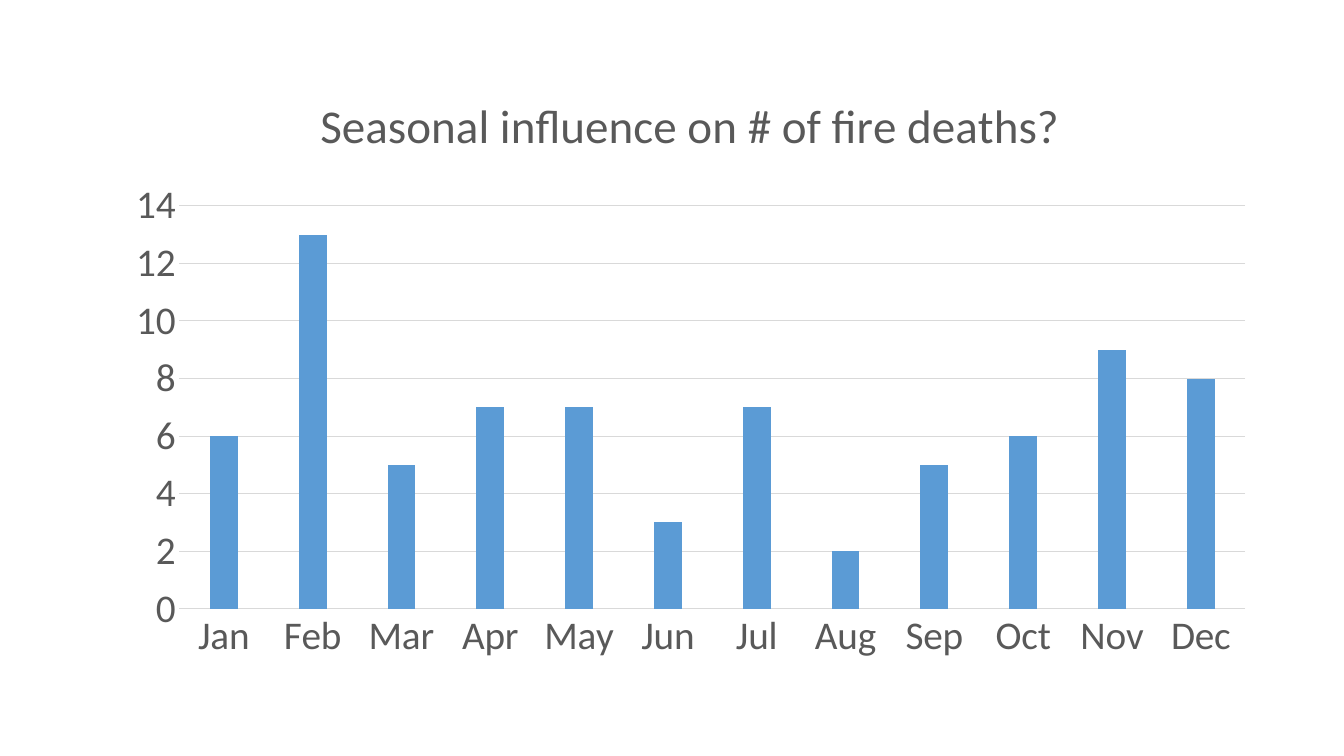
from pptx import Presentation
from pptx.chart.data import CategoryChartData
from pptx.dml.color import RGBColor
from pptx.enum.chart import XL_CHART_TYPE as ChartType, XL_TICK_MARK as TickMark
from pptx.util import Inches, Pt

GRAY_TEXT = "595959"
GRAY_LINE = "D9D9D9"


def color(hex_string):
    return RGBColor.from_string(hex_string)


def format_text(font, size, bold=False, fill=GRAY_TEXT):
    font.name = "Calibri"
    font.size = Pt(size)
    font.bold = bold
    font.color.rgb = color(fill)


presentation = Presentation()
presentation.slide_width = Inches(13.33)
presentation.slide_height = Inches(7.5)
slide = presentation.slides.add_slide(presentation.slide_layouts[6])

# Monthly deaths
deaths_by_month = {
    "Jan": 6, "Feb": 13, "Mar": 5, "Apr": 7, "May": 7, "Jun": 3,
    "Jul": 7, "Aug": 2, "Sep": 5, "Oct": 6, "Nov": 9, "Dec": 8,
}
chart_data = CategoryChartData()
chart_data.categories = list(deaths_by_month)
chart_data.add_series("Series 1", list(deaths_by_month.values()))

# Column chart
chart = slide.shapes.add_chart(
    ChartType.COLUMN_CLUSTERED,
    Inches(1.12), Inches(0.66), Inches(11.46), Inches(6.01), chart_data,
).chart
format_text(chart.font, 28, fill="000000")
chart.has_legend = False

# Chart title
title_frame = chart.chart_title.text_frame
title_frame.text = "Seasonal influence on # of fire deaths?"
format_text(title_frame.paragraphs[0].runs[0].font, 33.6)
chart.chart_title.include_in_layout = False

# Columns
plot = chart.plots[0]
plot.gap_width = 219
plot.overlap = -27
plot.vary_by_categories = False
column_fill = plot.series[0].format.fill
column_fill.solid()
column_fill.fore_color.rgb = color("5B9BD5")

# Axes and gridlines
month_axis, count_axis = chart.category_axis, chart.value_axis
for axis in (month_axis, count_axis):
    axis.major_tick_mark = TickMark.NONE
    axis.minor_tick_mark = TickMark.NONE
    format_text(axis.tick_labels.font, 28)
count_axis.minimum_scale = 0
count_axis.maximum_scale = 14
count_axis.major_unit = 2
count_axis.has_major_gridlines = True
count_axis.format.line.fill.background()
for line in (month_axis.format.line, count_axis.major_gridlines.format.line):
    line.color.rgb = color(GRAY_LINE)
    line.width = Pt(0.75)

presentation.save("out.pptx")
